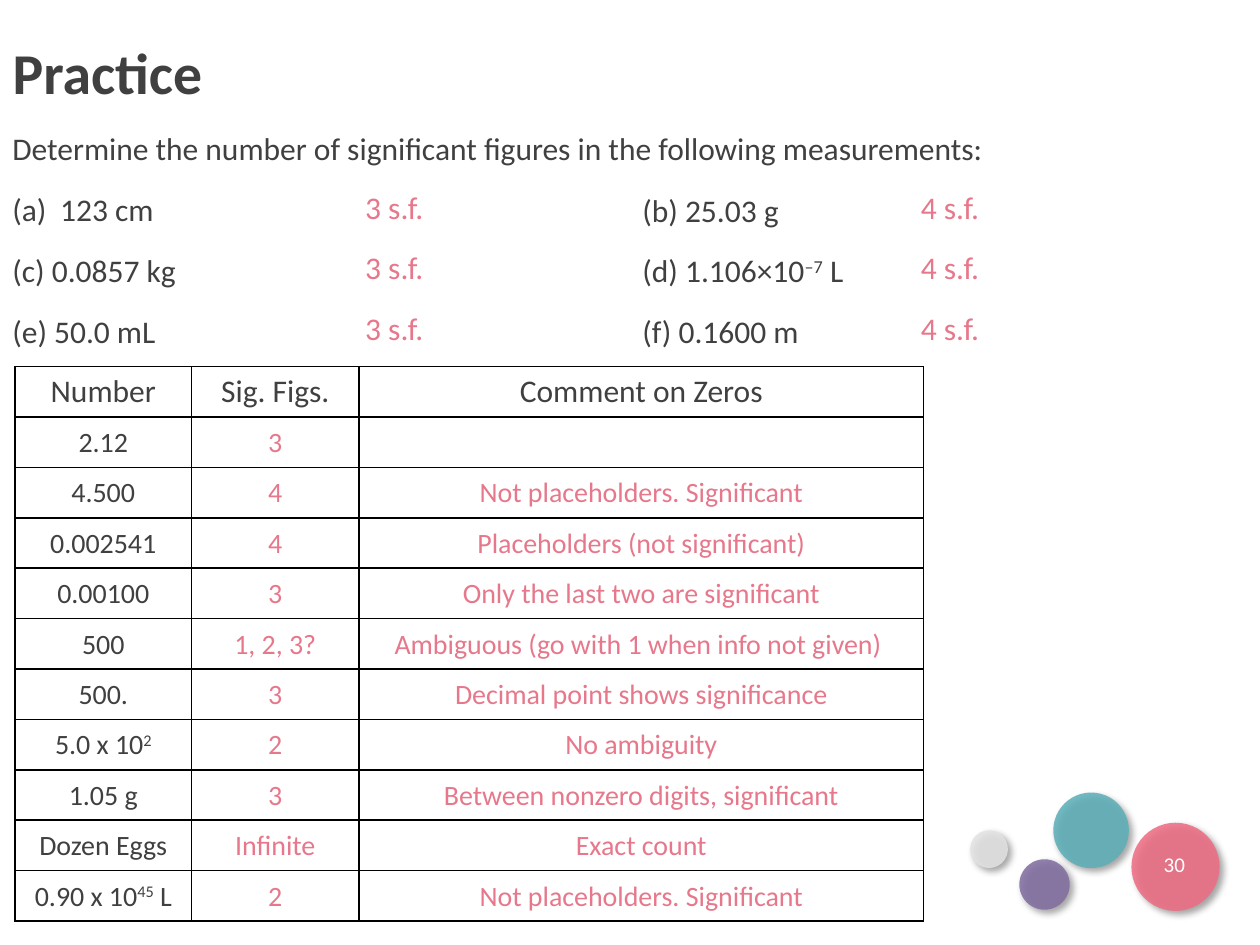
from dataclasses import dataclass

from lxml.etree import SubElement
from pptx import Presentation
from pptx.dml.color import RGBColor
from pptx.enum.shapes import MSO_SHAPE
from pptx.enum.text import MSO_ANCHOR, MSO_AUTO_SIZE, PP_ALIGN
from pptx.oxml import parse_xml
from pptx.oxml.ns import nsdecls, qn
from pptx.util import Inches, Pt


@dataclass(frozen=True)
class Theme:
    font: str = "Calibri"
    ink: str = "404040"
    answer: str = "E7788B"
    white: str = "FFFFFF"
    black: str = "000000"
    purple: str = "816DA1"
    teal: str = "5CAFB8"
    pink: str = "EE6C82"
    grey: str = "E3E3E3"
    title: int = 33
    body: int = 18
    entry: int = 16
    number: int = 12


T = Theme()

QUESTION = "Determine the number of significant figures in the following measurements:"
LEFT_ITEMS = ["123 cm", "(c) 0.0857 kg", "(e) 50.0 mL"]
RIGHT_ITEMS = [("(b) 25.03 g", 1.3), ("(d) 1.106×10^–7^ L", 1.99), ("(f) 0.1600 m", 1.45)]
ANSWERS = [(2.8, "3 s.f."), (7.21, "4 s.f.")]

HEADER = ["Number", "Sig. Figs.", "Comment on Zeros"]
ENTRIES = [
    ("2.12", "3", ""),
    ("4.500", "4", "Not placeholders. Significant"),
    ("0.002541", "4", "Placeholders (not significant)"),
    ("0.00100", "3", "Only the last two are significant"),
    ("500", "1, 2, 3?", "Ambiguous (go with 1 when info not given) "),
    ("500.", "3", "Decimal point shows significance"),
    ("5.0 x 10^2^", "2", "No ambiguity"),
    ("1.05 g", "3", "Between nonzero digits, significant"),
    ("Dozen Eggs", "Infinite", "Exact count"),
    ("0.90 x 10^45^ L", "2", "Not placeholders. Significant"),
]
COLS = [1.4, 1.33, 4.48]
ROW_H = 0.4


def write(p, text, size=T.body, color=T.ink, bold=False, align=PP_ALIGN.LEFT,
          line=None, after=None):
    """Fill a paragraph; text between ^ marks is superscript."""
    p.alignment = align
    if line is not None:
        p.line_spacing = line
    if after is not None:
        p.space_after = Pt(after)
    for i, part in enumerate(text.split("^")):
        if not part:
            continue
        r = p.add_run()
        r.text = part
        r.font.name = T.font
        r.font.size = Pt(size)
        r.font.bold = bold
        r.font.color.rgb = RGBColor.from_string(color)
        if i % 2:
            r._r.get_or_add_rPr().set("baseline", "30000")


def add_text(s, box, *lines, wrap=True, anchor=MSO_ANCHOR.TOP, grow=True, **fmt):
    tf = s.shapes.add_textbox(*map(Inches, box)).text_frame
    tf.word_wrap = wrap
    tf.vertical_anchor = anchor
    tf.auto_size = MSO_AUTO_SIZE.SHAPE_TO_FIT_TEXT if grow else MSO_AUTO_SIZE.NONE
    for i, text in enumerate(lines):
        write(tf.add_paragraph() if i else tf.paragraphs[0], text, **fmt)
    return tf


def add_title(s, box, text):
    sp = s.shapes.title
    sp.left, sp.top, sp.width, sp.height = map(Inches, box)
    sp.text_frame.vertical_anchor = MSO_ANCHOR.MIDDLE
    write(sp.text_frame.paragraphs[0], text, size=T.title, bold=True, line=0.9)


def number_item(p, indent):
    """Give a paragraph an automatic (a) label."""
    pPr = p._p.get_or_add_pPr()
    pPr.set("marL", str(Inches(indent)))
    pPr.set("indent", str(-Inches(indent)))
    SubElement(pPr, qn("a:buAutoNum"), type="alphaLcParenBoth")


def add_questions(s, box):
    left, top, width, height = box
    spacing = dict(line=1.15, after=10)
    tf = add_text(s, box, QUESTION, *LEFT_ITEMS, **spacing)
    number_item(tf.paragraphs[1], 0.38)
    for i, (text, w) in enumerate(RIGHT_ITEMS):
        y = top + 0.49 + 0.48 * i
        add_text(s, (left + 5, y, w, 0.42), text, wrap=False, **spacing)
        for x, answer in ANSWERS:
            add_text(s, (left + x, y + 0.02, 0.67, 0.4), answer, wrap=False, color=T.answer)


def border_cell(cell):
    tcPr = cell._tc.get_or_add_tcPr()
    for side in ("lnL", "lnR", "lnT", "lnB"):
        ln = SubElement(tcPr, qn(f"a:{side}"), w=str(Pt(1)))
        SubElement(SubElement(ln, qn("a:solidFill")), qn("a:srgbClr"), val=T.black)
    cell.fill.background()


def add_grid(s, box):
    """Ruled table with a header; entries lie over it so each can be revealed alone."""
    left, top = box[:2]
    table = s.shapes.add_table(len(ENTRIES) + 1, len(COLS), *map(Inches, box)).table
    table.first_row = table.horz_banding = False
    for col, w in zip(table.columns, COLS):
        col.width = Inches(w)
    for row in table.rows:
        row.height = Inches(ROW_H)
        for cell in row.cells:
            border_cell(cell)
            cell.vertical_anchor = MSO_ANCHOR.MIDDLE
            cell.margin_top = cell.margin_bottom = Inches(0.04)
    for cell, text in zip(table.rows[0].cells, HEADER):
        write(cell.text_frame.paragraphs[0], text, align=PP_ALIGN.CENTER)

    for i, entry in enumerate(ENTRIES, 1):
        for j, text in enumerate(entry):
            if text:
                cell_box = (left + sum(COLS[:j]), top + 0.01 + ROW_H * i, COLS[j], 0.37)
                add_text(s, cell_box, text, size=T.entry, align=PP_ALIGN.CENTER,
                         color=T.answer if j else T.ink)


def add_bubble(s, left, top, size, color):
    sp = s.shapes.add_shape(MSO_SHAPE.OVAL, *map(Inches, (left, top, size, size)))
    sp.fill.solid()
    sp.fill.fore_color.rgb = RGBColor.from_string(color)
    sp.line.fill.background()
    spPr = sp._element.spPr
    fill = spPr.find(qn("a:solidFill")).find(qn("a:srgbClr"))
    SubElement(fill, qn("a:alpha"), val="86000")
    spPr.append(parse_xml(
        f'<a:effectLst {nsdecls("a")}><a:outerShdw blurRad="{Pt(4)}" dist="{Pt(3)}" '
        f'dir="2700000" algn="tl" rotWithShape="0"><a:srgbClr val="{T.black}">'
        '<a:alpha val="40000"/></a:srgbClr></a:outerShdw></a:effectLst>'))
    return sp


def add_bubbles(s, box, number):
    left, top = box[:2]
    for x, y, size, color in [(0.39, 0.53, 0.4, T.purple), (0.66, 0, 0.6, T.teal),
                              (1.28, 0.24, 0.7, T.pink)]:
        add_bubble(s, left + x, top + y, size, color)
    add_bubble(s, left, top + 0.3, 0.3, T.grey).rotation = 2.8
    add_text(s, (left + 1.43, top + 0.37, 0.38, 0.4), number, size=T.number,
             color=T.white, align=PP_ALIGN.CENTER, anchor=MSO_ANCHOR.MIDDLE, grow=False)


def main():
    prs = Presentation()
    prs.slide_width, prs.slide_height = Inches(10), Inches(7.5)
    s = prs.slides.add_slide(prs.slide_layouts[5])
    add_bubbles(s, (7.7, 6.29, 1.98, 0.94), "30")
    add_title(s, (0, 0.3, 9.03, 0.6), "Practice")
    add_questions(s, (0, 0.93, 10, 1.89))
    add_grid(s, (0.12, 2.91, sum(COLS), ROW_H * (len(ENTRIES) + 1)))
    prs.save("out.pptx")


if __name__ == "__main__":
    main()
